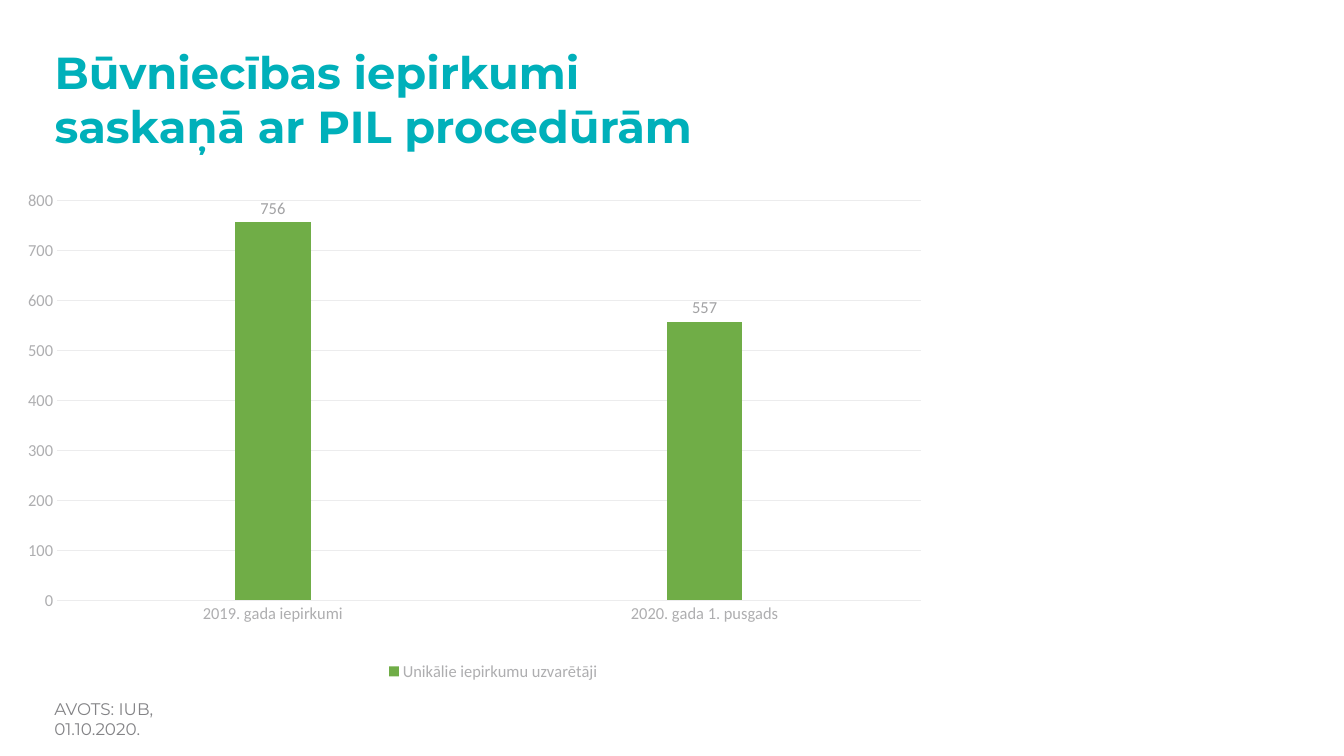
from dataclasses import dataclass

from lxml.etree import SubElement
from pptx import Presentation
from pptx.chart.data import CategoryChartData
from pptx.dml.color import RGBColor
from pptx.enum.chart import (XL_CHART_TYPE, XL_LABEL_POSITION,
                             XL_LEGEND_POSITION, XL_TICK_MARK)
from pptx.enum.text import MSO_ANCHOR, MSO_AUTO_SIZE, PP_ALIGN
from pptx.oxml import parse_xml
from pptx.oxml.ns import nsdecls, qn
from pptx.util import Cm, Pt


@dataclass(frozen=True)
class Theme:
    head: str = "Montserrat"
    data: str = "Calibri"
    teal: str = "00B0BA"
    gray: str = "838386"
    axis: str = "AEAEB0"
    label: str = "A2A2A4"
    grid: str = "ECECED"
    bars: tuple = ("B4CFA8", "70AD47", "5D8F3B")
    big: int = 32
    small: int = 12


def tint(color):
    return RGBColor.from_string(color)


def style(font, name, size, color, bold=False):
    font.name, font.size, font.bold = name, Pt(size), bold
    font.color.rgb = tint(color)


def rule(line, color):
    line.width = Pt(0.75)
    line.color.rgb = tint(color)


def place(chart, box):
    """Fix the inner plot area as fractions of the chart frame."""
    area = chart.plots[0]._element.getparent()
    for old in area.findall(qn("c:layout")):
        area.remove(old)
    parts = "".join(f'<c:{tag} val="{val}"/>' for tag, val in zip("xywh", box))
    area.insert(0, parse_xml(
        f'<c:layout {nsdecls("c")}><c:manualLayout>'
        '<c:layoutTarget val="inner"/><c:xMode val="edge"/>'
        f'<c:yMode val="edge"/>{parts}</c:manualLayout></c:layout>'))


def unlist(legend, hidden):
    """Drop the series with these indexes from the legend."""
    for spot, index in enumerate(hidden, 1):
        entry = parse_xml(
            f'<c:legendEntry {nsdecls("c")}><c:idx val="{index}"/></c:legendEntry>')
        SubElement(entry, qn("c:delete")).set("val", "1")
        legend._element.insert(spot, entry)


class Deck:
    def __init__(self, theme):
        self.theme = theme
        self.file = Presentation()
        self.file.slide_width, self.file.slide_height = Cm(33.87), Cm(19.05)
        self.slide = self.file.slides.add_slide(self.file.slide_layouts[5])

    def title(self, text, box):
        shape = self.slide.shapes.title
        shape.left, shape.top, shape.width, shape.height = map(Cm, box)
        frame = shape.text_frame
        frame.text = text
        frame.word_wrap = True
        frame.auto_size = MSO_AUTO_SIZE.NONE
        frame.vertical_anchor = MSO_ANCHOR.MIDDLE
        para = frame.paragraphs[0]
        para.alignment = PP_ALIGN.LEFT
        style(para.font, self.theme.head, self.theme.big, self.theme.teal, True)

    def note(self, text, box):
        frame = self.slide.shapes.add_textbox(*map(Cm, box)).text_frame
        frame.text = text
        frame.word_wrap = True
        style(frame.paragraphs[0].font, self.theme.head, self.theme.small,
              self.theme.gray)

    def chart(self, cats, rows, hidden, box, inner):
        look = self.theme
        data = CategoryChartData()
        data.categories = cats
        for name, vals in rows:
            data.add_series(name, vals)
        chart = self.slide.shapes.add_chart(
            XL_CHART_TYPE.COLUMN_CLUSTERED, *map(Cm, box), data).chart
        chart.has_title = False
        style(chart.font, look.data, 10, look.gray)
        place(chart, inner)

        for axis in (chart.category_axis, chart.value_axis):
            axis.major_tick_mark = axis.minor_tick_mark = XL_TICK_MARK.NONE
            style(axis.tick_labels.font, look.data, look.small, look.axis)
        rule(chart.category_axis.format.line, look.grid)
        scale = chart.value_axis
        scale.minimum_scale, scale.maximum_scale, scale.major_unit = 0, 800, 100
        scale.format.line.fill.background()
        rule(scale.major_gridlines.format.line, look.grid)

        plot = chart.plots[0]
        plot.gap_width, plot.overlap = 219, -27
        plot.vary_by_categories = False
        for bar, color in zip(plot.series, look.bars):
            bar.format.fill.solid()
            bar.format.fill.fore_color.rgb = tint(color)
            labels = bar.data_labels
            labels.show_value = True
            labels.position = XL_LABEL_POSITION.OUTSIDE_END
            style(labels.font, look.data, look.small, look.label)

        chart.has_legend = True
        legend = chart.legend
        legend.position = XL_LEGEND_POSITION.BOTTOM
        legend.include_in_layout = False
        style(legend.font, look.data, look.small, look.axis)
        unlist(legend, hidden)


def main():
    deck = Deck(Theme())
    deck.title("Būvniecības iepirkumi saskaņā ar PIL procedūrām",
               (1.12, 0.94, 17.65, 3.07))
    blank = (None, None)
    deck.chart(
        cats=("2019. gada iepirkumi", "2020. gada 1. pusgads"),
        rows=(("Series 1", blank),
              ("Unikālie iepirkumu uzvarētāji", (756, 557)),
              ("Series 3", blank)),
        hidden=(0, 2),
        box=(0.71, 4.67, 22.94, 12.6),
        inner=(0.01, 0.03, 0.97, 0.8))
    deck.note("AVOTS: IUB, 01.10.2020.", (1.12, 17.48, 4.95, 0.76))
    deck.file.save("out.pptx")


if __name__ == "__main__":
    main()
